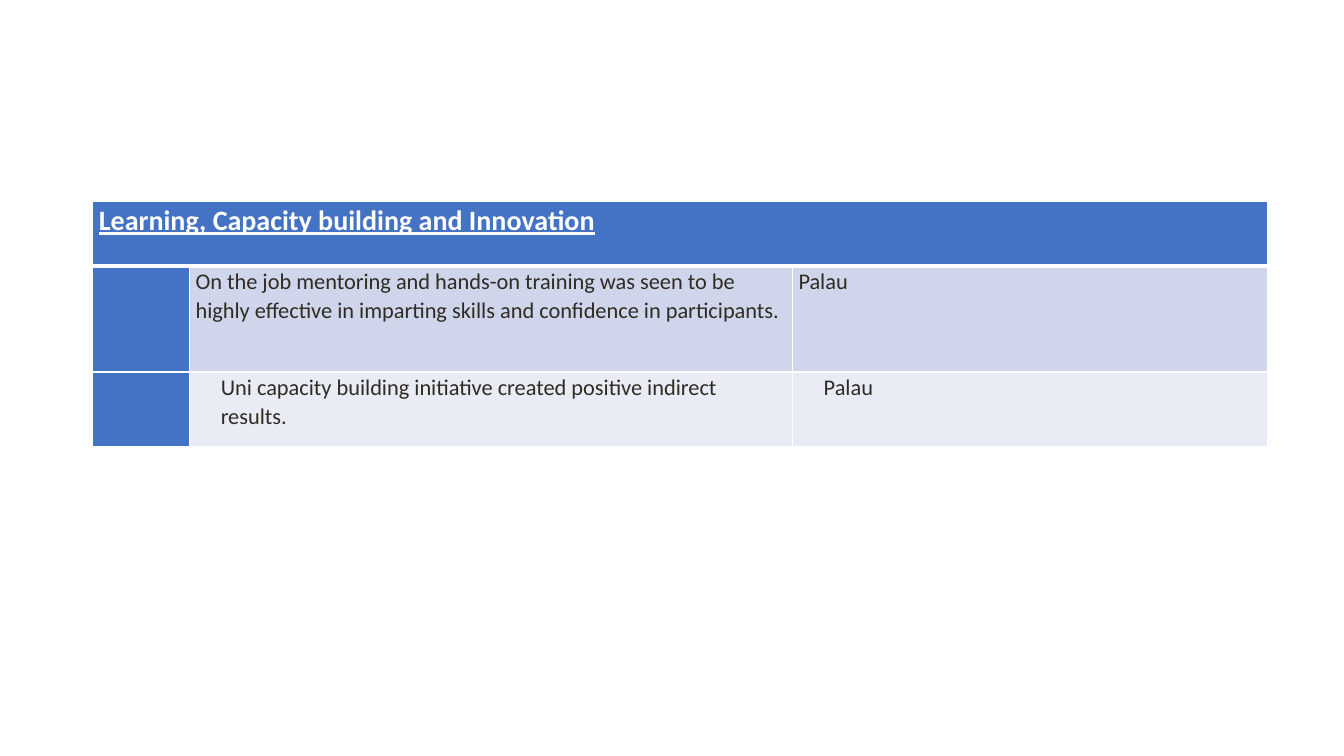
from lxml.etree import SubElement
from pptx import Presentation
from pptx.dml.color import RGBColor as Rgb
from pptx.oxml.ns import qn
from pptx.util import Inches, Pt

COLORS = {"white": "FFFFFF", "blue": "4472C4", "band": "CFD5EA",
          "pale": "E9EBF5", "text": "302C24"}


def write_text(cell, text, size=16, color="text", bold=False, underline=False, indent=0):
    paragraph = cell.text_frame.paragraphs[0]
    paragraph.line_spacing = 1.07
    if indent:
        paragraph._p.get_or_add_pPr().set("marL", str(Inches(indent)))
    run = paragraph.add_run()
    run.text = text
    font = run.font
    font.name, font.size = "Calibri", Pt(size)
    font.bold, font.underline = bold, underline
    font.color.rgb = Rgb.from_string(COLORS[color])


class SlideBuilder:
    def __init__(self, presentation):
        self.slide = presentation.slides.add_slide(presentation.slide_layouts[6])

    def table(self, left, top, widths, heights):
        frame = self.slide.shapes.add_table(
            len(heights), len(widths), Inches(left), Inches(top),
            Inches(sum(widths)), Inches(sum(heights)))
        table = frame.table
        for column, width in zip(table.columns, widths):
            column.width = Inches(width)
        for row, height in zip(table.rows, heights):
            row.height = Inches(height)
        return table

    def cell(self, cell, fill, top=1, bottom=1):
        cell.margin_left = cell.margin_right = Inches(0.06)
        cell.margin_top = cell.margin_bottom = 0
        properties = cell._tc.get_or_add_tcPr()
        # Borders come before the fill in the cell properties
        for side, width in (("L", 1), ("R", 1), ("T", top), ("B", bottom)):
            line = SubElement(properties, qn(f"a:ln{side}"), w=str(Pt(width)))
            solid = SubElement(line, qn("a:solidFill"))
            SubElement(solid, qn("a:srgbClr"), val=COLORS["white"])
        cell.fill.solid()
        cell.fill.fore_color.rgb = Rgb.from_string(COLORS[fill])


def main():
    presentation = Presentation()
    presentation.slide_width = Inches(13.33)
    presentation.slide_height = Inches(7.5)
    builder = SlideBuilder(presentation)
    table = builder.table(0.92, 2, widths=[0.96, 5.98, 4.71], heights=[0.64, 1.05, 0.74])

    # Heading across all columns
    for column in range(3):
        builder.cell(table.cell(0, column), "blue", bottom=3)
    table.cell(0, 0).merge(table.cell(0, 2))
    write_text(table.cell(0, 0), "Learning, Capacity building and Innovation",
               size=20, color="white", bold=True, underline=True)

    # Lessons and their places
    lessons = [
        ("On the job mentoring and hands-on training was seen to be highly effective "
         "in imparting skills and confidence in participants.", "Palau", "band", 0),
        ("Uni capacity building initiative created positive indirect results.",
         "Palau", "pale", 0.25),
    ]
    for row, (lesson, place, fill, indent) in enumerate(lessons, start=1):
        top = 3 if row == 1 else 1
        builder.cell(table.cell(row, 0), "blue", top=top)
        for column, text in enumerate((lesson, place), start=1):
            builder.cell(table.cell(row, column), fill, top=top)
            write_text(table.cell(row, column), text, indent=indent)

    presentation.save("out.pptx")


if __name__ == "__main__":
    main()
